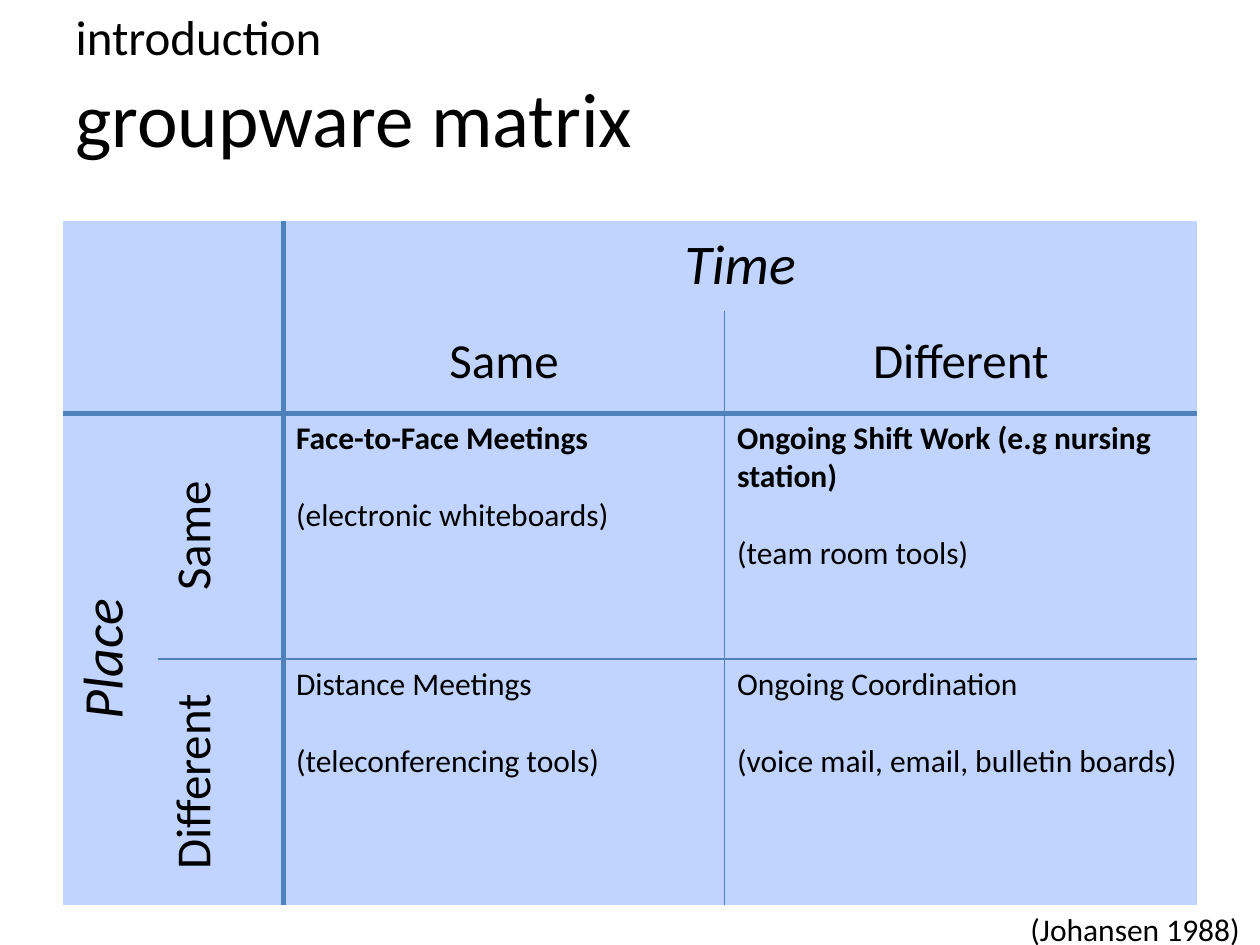
from lxml.etree import SubElement
from pptx import Presentation
from pptx.dml.color import RGBColor
from pptx.enum.text import MSO_ANCHOR, MSO_AUTO_SIZE, PP_ALIGN
from pptx.oxml.ns import qn
from pptx.util import Inches, Pt

# Content
TITLE = "groupware matrix"
TOPIC = "introduction"
CREDIT = "(Johansen 1988)"
COLS = [0.75, 1, 3.5, 3.75]
ROWS = [0.72, 0.81, 1.95, 1.95]
# Axis heads: row, column, row span, column span, text, size, italic
HEADS = [
    (0, 2, 1, 2, "Time", 32, True),
    (1, 2, 1, 1, "Same", 28, False),
    (1, 3, 1, 1, "Different", 28, False),
    (2, 0, 2, 1, "Place", 32, True),
    (2, 1, 1, 1, "Same", 28, False),
    (3, 1, 1, 1, "Different", 28, False),
]
# Matrix cells: kind of work, tools, bold first line
CELLS = [
    [("Face-to-Face Meetings", "(electronic whiteboards)", True),
     ("Ongoing Shift Work (e.g nursing station)", "(team room tools)", True)],
    [("Distance Meetings", "(teleconferencing tools)", False),
     ("Ongoing Coordination", "(voice mail, email, bulletin boards)", False)],
]
HUES = {"text": "000000", "fill": "C0D4FF", "line": "4F81BD"}
FONT = "Calibri"
HEAD = 2  # rows and columns taken by the axis heads


def hue(name):
    return RGBColor.from_string(HUES[name])


def write(para, text, size, bold=False, italic=False, align=PP_ALIGN.LEFT):
    para.alignment = align
    run = para.add_run()
    run.text = text
    font = run.font
    font.name, font.size = FONT, Pt(size)
    font.bold, font.italic = bold, italic
    font.color.rgb = hue("text")


def place(shape, left, top, width, height):
    shape.left, shape.top = Inches(left), Inches(top)
    shape.width, shape.height = Inches(width), Inches(height)


def weight(edge, across):
    """Thick rule after the heads, thin rule between the two halves."""
    if edge == HEAD:
        return 3
    return 1 if edge == HEAD + 1 and across > 0 else 0


def border(cell, side, width):
    line = SubElement(cell._tc.get_or_add_tcPr(), qn("a:ln" + side), w=str(Pt(width)))
    if width:
        fill = SubElement(line, qn("a:solidFill"))
        SubElement(fill, qn("a:srgbClr"), val=HUES["line"])
    else:
        SubElement(line, qn("a:noFill"))


deck = Presentation()
deck.slide_width, deck.slide_height = Inches(10), Inches(7.5)
slide = deck.slides.add_slide(deck.slide_layouts[1])

# Title and topic line
title, topic = slide.placeholders
place(title, 0.5, 0.3, 9, 1.25)
title.text_frame.vertical_anchor = MSO_ANCHOR.MIDDLE
write(title.text_frame.paragraphs[0], TITLE, 44)

place(topic, 0.5, 0, 9, 0.58)
topic.text_frame.auto_size = MSO_AUTO_SIZE.NONE
para = topic.text_frame.paragraphs[0]
props = para._p.get_or_add_pPr()
props.set("marL", "0")
props.set("indent", "0")
SubElement(props, qn("a:buNone"))
write(para, TOPIC, 28)

# Table grid
frame = slide.shapes.add_table(len(ROWS), len(COLS), Inches(0.5), Inches(1.75),
                               Inches(sum(COLS)), Inches(sum(ROWS)))
table = frame.table
table.first_row = table.horz_banding = False
for col, width in zip(table.columns, COLS):
    col.width = Inches(width)
for row, height in zip(table.rows, ROWS):
    row.height = Inches(height)

for r in range(len(ROWS)):
    for c in range(len(COLS)):
        cell = table.cell(r, c)
        for side, width in (("L", weight(c, r)), ("R", weight(c + 1, r)),
                            ("T", weight(r, c)), ("B", weight(r + 1, c))):
            border(cell, side, width)
        cell.fill.solid()
        cell.fill.fore_color.rgb = hue("fill")
table.cell(0, 0).merge(table.cell(HEAD - 1, HEAD - 1))

# Axis heads
for r, c, down, over, text, size, italic in HEADS:
    cell = table.cell(r, c)
    if down * over > 1:
        cell.merge(table.cell(r + down - 1, c + over - 1))
    cell.vertical_anchor = MSO_ANCHOR.MIDDLE
    if c < HEAD:
        cell._tc.get_or_add_tcPr().set("vert", "vert270")
    write(cell.text_frame.paragraphs[0], text, size, italic=italic,
          align=PP_ALIGN.CENTER)

# Matrix cells
for r, line in enumerate(CELLS, HEAD):
    for c, (work, tools, bold) in enumerate(line, HEAD):
        body = table.cell(r, c).text_frame
        write(body.paragraphs[0], work, 18, bold)
        para = body.add_paragraph()
        para.space_before = Pt(22)
        write(para, tools, 18)

# Credit
note = slide.shapes.add_textbox(Inches(8.08), Inches(7.17), Inches(1.92), Inches(0.33))
note.text_frame.word_wrap = True
write(note.text_frame.paragraphs[0], CREDIT, 18)

deck.save("out.pptx")
